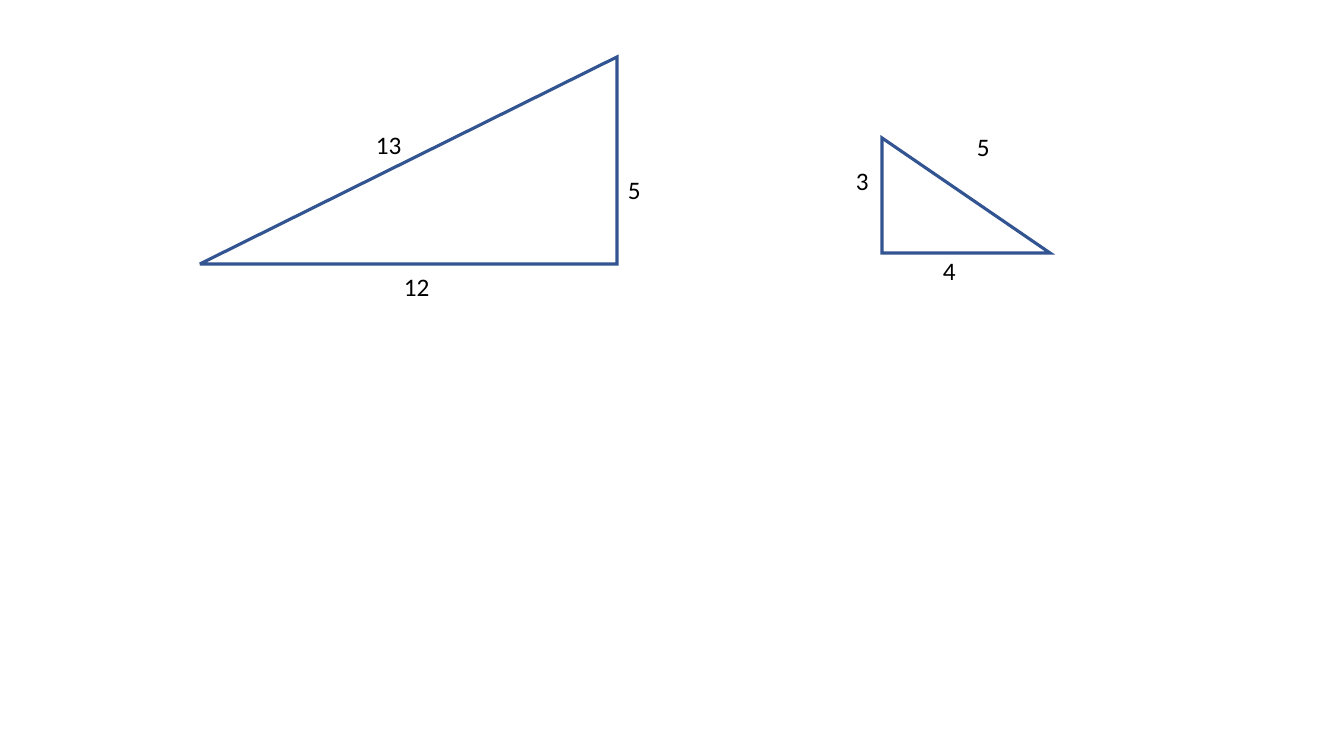
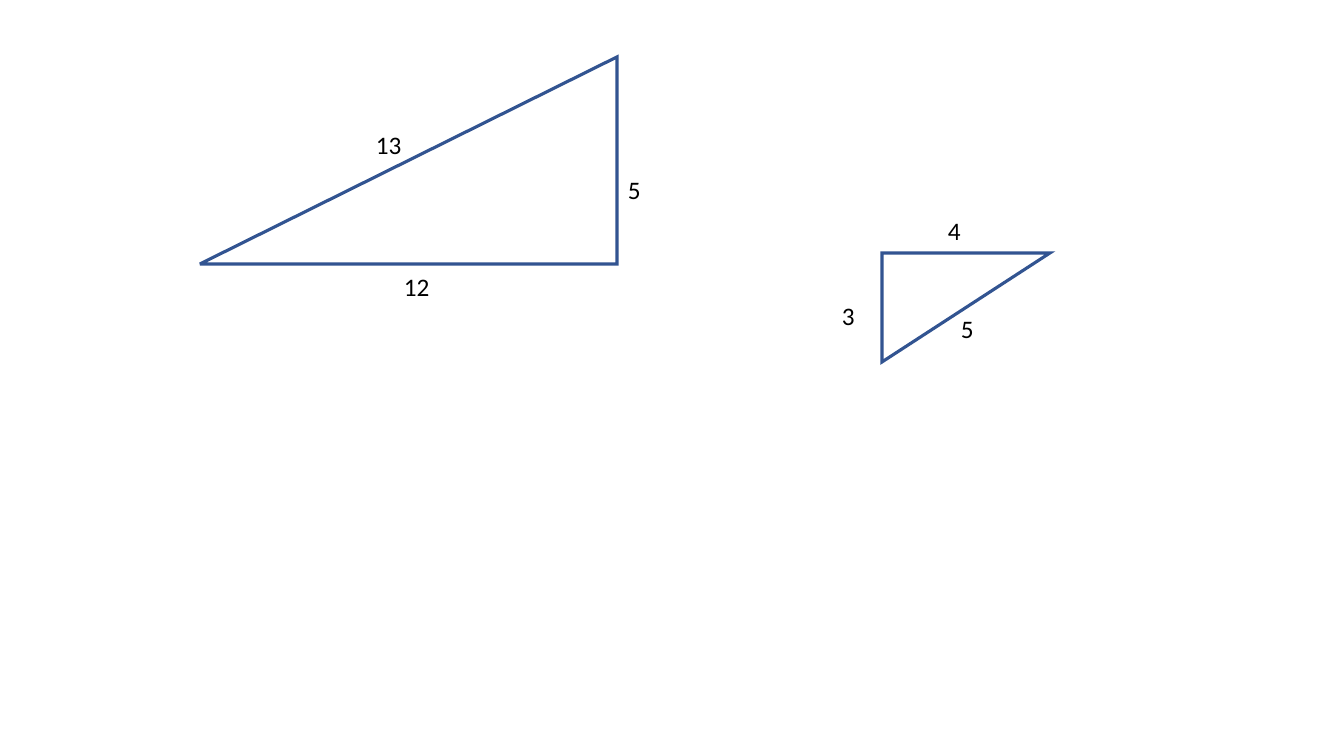
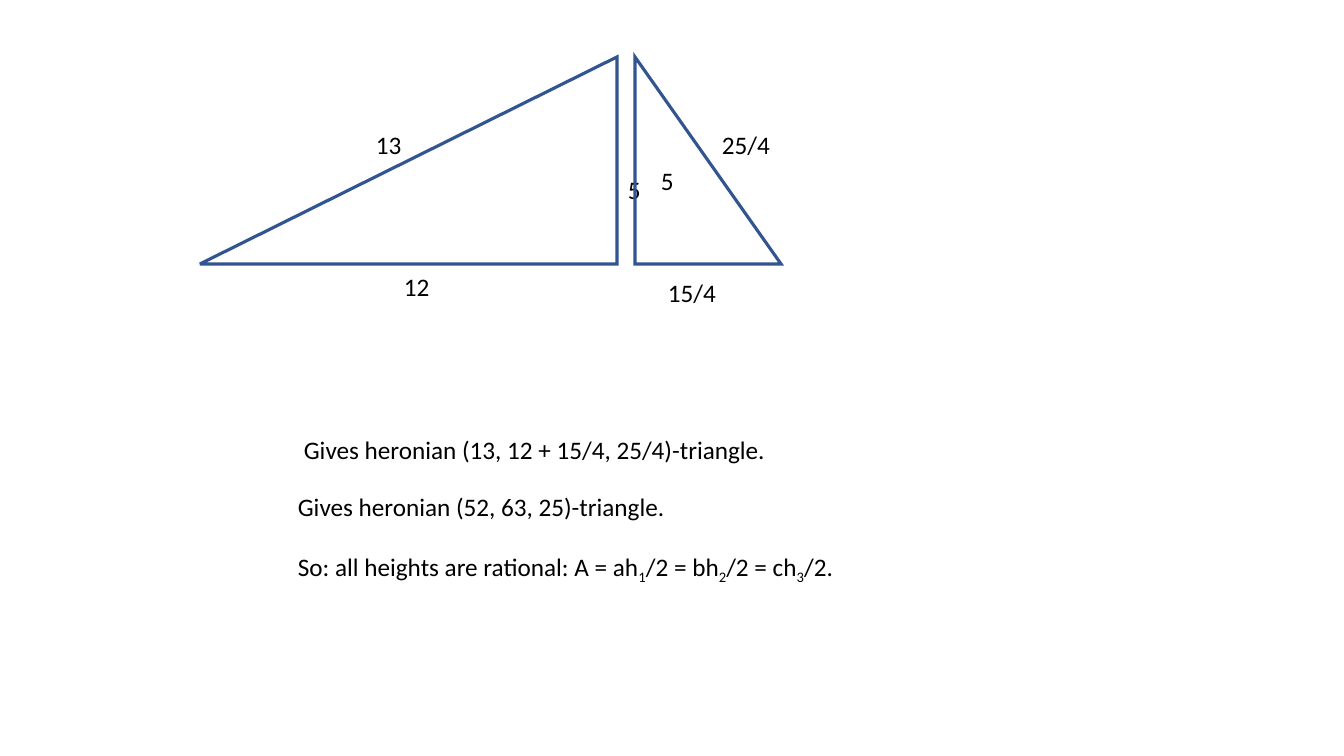
from lxml.etree import SubElement
from pptx import Presentation
from pptx.dml.color import RGBColor
from pptx.enum.shapes import MSO_SHAPE
from pptx.enum.text import MSO_AUTO_SIZE
from pptx.oxml.ns import qn
from pptx.util import Pt

EMU_PER_PX = 12192000 / 1344
FONT, BLACK, BLUE = "Calibri", "000000", "325491"
LABEL_WIDTHS = {1: 33, 2: 46, 4: 69}
LINE_HEIGHT, SENTENCE_WIDTH = 40, 571

LARGE = {
    "box": (200, 57, 417, 207),
    "flip": "flipH",
    "labels": [("5", 618, 169), ("13", 366, 124), ("12", 394, 266)],
}

SLIDES = [
    {"triangles": [LARGE, {
        "box": (882, 138, 168, 115),
        "labels": [("4", 933, 250), ("5", 967, 126), ("3", 846, 160)],
    }]},
    {"triangles": [LARGE, {
        "box": (882, 253, 168, 109),
        "flip": "flipV",
        "labels": [("4", 938, 210), ("5", 951, 308), ("3", 832, 295)],
    }]},
    {"triangles": [LARGE, {
        "box": (635, 57, 146, 207),
        "labels": [("5", 651, 160), ("15/4", 658, 272), ("25/4", 712, 124)],
    }],
     "sentences": [
        (["Gives heronian (13, 12 + 15/4, 25/4)-triangle."], 294, 429),
        (["Gives heronian (52, 63, 25)-triangle."], 288, 486),
        (["So: all heights are rational: A = ah", "1", "/2 = bh", "2",
          "/2 = ch", "3", "/2."], 288, 546),
    ]},
]


def px(*lengths):
    return [round(n * EMU_PER_PX) for n in lengths]


def rgb(value):
    return RGBColor.from_string(value)


def add_text(s, parts, x, y, width, wrap):
    tf = s.shapes.add_textbox(*px(x, y, width, LINE_HEIGHT)).text_frame
    tf.word_wrap = wrap
    tf.auto_size = MSO_AUTO_SIZE.SHAPE_TO_FIT_TEXT
    p = tf.paragraphs[0]
    for i, part in enumerate(parts):
        r = p.add_run()
        r.text = part
        r.font.name, r.font.size = FONT, Pt(18)
        r.font.color.rgb = rgb(BLACK)
        if i % 2:
            r.font._element.set("baseline", "-25000")


def add_triangle(s, box, labels, flip=None):
    for text, x, y in labels:
        add_text(s, [text], x, y, LABEL_WIDTHS[len(text)], False)
    sp = s.shapes.add_shape(MSO_SHAPE.RIGHT_TRIANGLE, *px(*box))
    sp.shadow.inherit = False
    sp.fill.background()
    sp.line.color.rgb = rgb(BLUE)
    sp.line.width = Pt(2.25)
    properties = sp._element.spPr
    SubElement(properties.find(qn("a:ln")), qn("a:miter"), lim="800000")
    if flip:
        properties.find(qn("a:xfrm")).set(flip, "1")


def main():
    prs = Presentation()
    prs.slide_width, prs.slide_height = px(1344, 756)
    for content in SLIDES:
        s = prs.slides.add_slide(prs.slide_layouts[6])
        for triangle in content["triangles"]:
            add_triangle(s, **triangle)
        for parts, x, y in content.get("sentences", []):
            add_text(s, parts, x, y, SENTENCE_WIDTH, True)
    prs.save("out.pptx")


if __name__ == "__main__":
    main()
